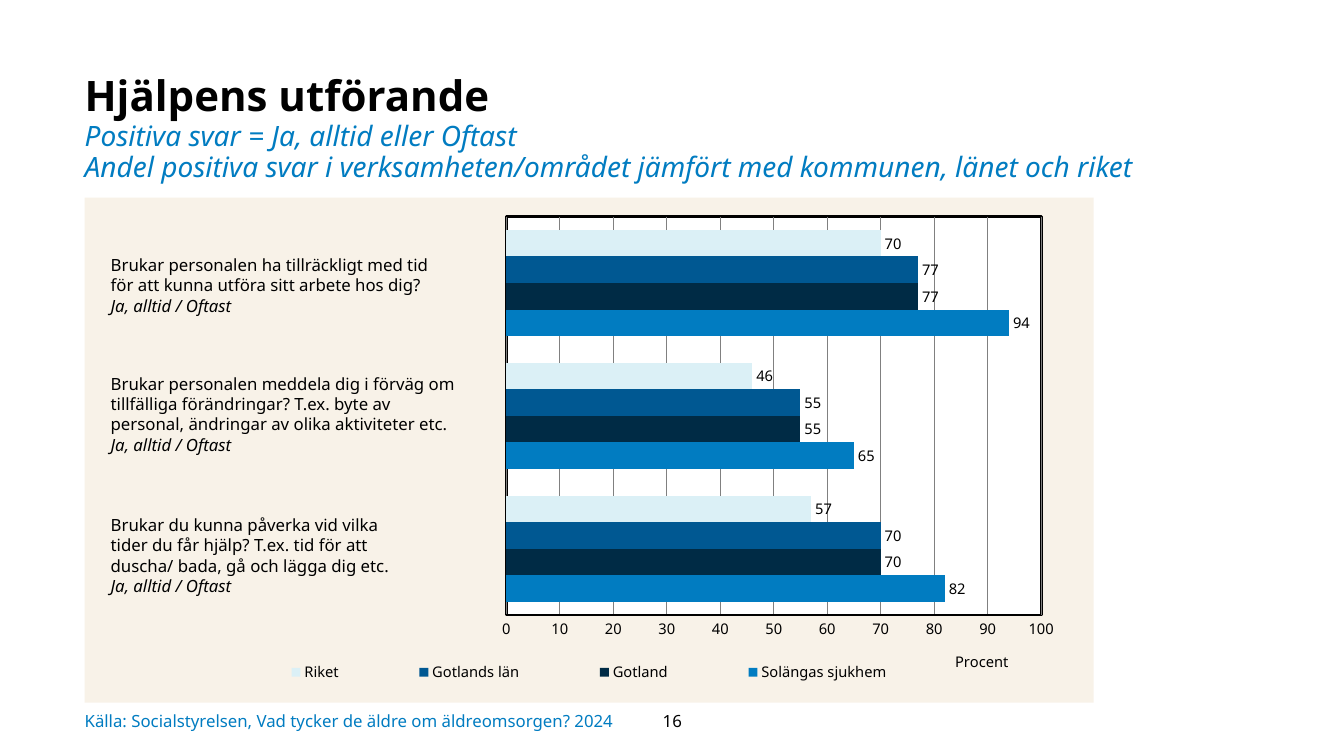
from dataclasses import dataclass

from lxml import etree
from pptx import Presentation
from pptx import util as u
from pptx.chart.data import CategoryChartData
from pptx.dml.color import RGBColor
from pptx.enum import chart as ec
from pptx.enum import text as et
from pptx.oxml import parse_xml
from pptx.oxml.ns import nsdecls, qn

FONT = "Noto Sans"
BLACK = RGBColor(0x00, 0x00, 0x00)
BLUE = RGBColor(0x01, 0x7C, 0xC1)
NAVY = RGBColor(0x00, 0x2B, 0x45)
MID = RGBColor(0x00, 0x58, 0x92)
PALE = RGBColor(0xDB, 0xF0, 0xF6)
SAND = RGBColor(0xF8, 0xF2, 0xE8)
WHITE = RGBColor(0xFF, 0xFF, 0xFF)
GREY = RGBColor(0x80, 0x80, 0x80)

# The slide is a grid of 160 columns by 90 rows.
WIDTH, HEIGHT = u.Inches(13.33), u.Inches(7.5)
COLS, ROWS = 160, 90
LEFT = 10.08
LABEL = 12


@dataclass(frozen=True)
class Box:
    col: float
    row: float
    wide: float
    high: float

    def place(self) -> tuple[int, int, int, int]:
        dx, dy = WIDTH / COLS, HEIGHT / ROWS
        return (int(self.col * dx), int(self.row * dy),
                int(self.wide * dx), int(self.high * dy))


@dataclass(frozen=True)
class Query:
    box: Box
    lines: tuple[str, ...]


@dataclass(frozen=True)
class Series:
    name: str
    values: tuple[int, ...]
    color: RGBColor


ANSWER = "Ja, alltid / Oftast"
QUERIES = (
    Query(Box(12, 29.76, 56.64, 10.56),
          ("Brukar personalen ha tillräckligt med tid",
           "för att kunna utföra sitt arbete hos dig?")),
    Query(Box(12, 43.92, 44.64, 10.92),
          ("Brukar personalen meddela dig i förväg om tillfälliga förändringar? "
           "T.ex. byte av personal, ändringar av olika aktiviteter etc.",)),
    Query(Box(12, 60.72, 35.64, 10.92),
          ("Brukar du kunna påverka vid vilka tider du får hjälp? "
           "T.ex. tid för att duscha/ bada, gå och lägga dig etc.",)),
)
SERIES = (
    Series("Solängas sjukhem", (82, 65, 94), BLUE),
    Series("Gotland", (70, 55, 77), NAVY),
    Series("Gotlands län", (70, 55, 77), MID),
    Series("Riket", (57, 46, 70), PALE),
)


def style(font, size: float, color: RGBColor = BLACK,
          bold: bool = False, italic: bool = False) -> None:
    font.name, font.size, font.bold, font.italic = FONT, u.Pt(size), bold, italic
    font.color.rgb = color


def write(slide, box: Box, words: str, size: float = LABEL, color: RGBColor = BLACK):
    frame = slide.shapes.add_textbox(*box.place()).text_frame
    frame.word_wrap = True
    frame.text = words
    for para in frame.paragraphs:
        for run in para.runs:
            style(run.font, size, color)
    return frame


def title(slide) -> None:
    words = ("Hjälpens utförande\vPositiva svar = Ja, alltid eller Oftast\v"
             "Andel positiva svar i verksamheten/området jämfört med kommunen, länet och riket")
    frame = write(slide, Box(LEFT, 8.16, 130.32, 14.52), words)
    frame.margin_left = 0
    para = frame.paragraphs[0]
    para.line_spacing = 0.94
    head, *subs = para.runs
    style(head.font, 30, bold=True)
    for sub in subs:
        style(sub.font, 20, BLUE, italic=True)


def ask(slide, query: Query) -> None:
    frame = write(slide, query.box, "\n".join((*query.lines, ANSWER)))
    frame.paragraphs[-1].runs[0].font.italic = True


def foot(slide) -> None:
    num = write(slide, Box(73.92, 83.4, 12.24, 4.8), "16")
    num.paragraphs[0].alignment = et.PP_ALIGN.CENTER
    cite = write(slide, Box(LEFT, 83.4, 108.36, 4.8),
                 "Källa: Socialstyrelsen, Vad tycker de äldre om äldreomsorgen? 2024",
                 color=BLUE)
    cite.margin_left = cite.margin_right = cite.margin_top = cite.margin_bottom = 0
    for frame in (num, cite):
        frame.vertical_anchor = et.MSO_ANCHOR.MIDDLE


def layout(node, index: int, **shares: float) -> None:
    """Pin a chart part at shares of the chart's width and height."""
    for old in node.findall(qn("c:layout")):
        node.remove(old)
    lay = parse_xml(f"<c:layout {nsdecls('c')}><c:manualLayout/></c:layout>")
    if node.tag == qn("c:plotArea"):
        etree.SubElement(lay[0], qn("c:layoutTarget")).set("val", "inner")
    for key in "xy":
        etree.SubElement(lay[0], qn(f"c:{key}Mode")).set("val", "edge")
    for key, share in shares.items():
        etree.SubElement(lay[0], qn(f"c:{key}")).set("val", str(share))
    node.insert(index, lay)


def panel(fill: RGBColor, line: str):
    return parse_xml(
        f'<c:spPr {nsdecls("c", "a")}><a:solidFill><a:srgbClr val="{fill}"/>'
        f"</a:solidFill>{line}</c:spPr>")


def scale(axis) -> None:
    axis.minimum_scale, axis.maximum_scale, axis.major_unit = 0, 100, 10
    axis.major_tick_mark = axis.minor_tick_mark = ec.XL_TICK_MARK.NONE
    axis.format.line.color.rgb = BLACK
    axis.format.line.width = u.Pt(2)
    axis.has_major_gridlines = True
    axis.major_gridlines.format.line.color.rgb = GREY
    axis.major_gridlines.format.line.width = u.Pt(0.75)
    style(axis.tick_labels.font, 10.5)
    name = axis.axis_title
    name.text_frame.text = "Procent"
    style(name.text_frame.paragraphs[0].runs[0].font, 10.5)
    layout(name._element, 1, x=0.86, y=0.89)


def graph(slide) -> None:
    data = CategoryChartData()
    data.categories = ["1", "2", "3"]
    for item in SERIES:
        data.add_series(item.name, item.values)
    chart = slide.shapes.add_chart(
        ec.XL_CHART_TYPE.BAR_CLUSTERED, *Box(LEFT, 23.52, 120.12, 60.12).place(), data).chart
    chart.has_title = False
    style(chart.font, 10.5)
    plot = chart.plots[0]
    plot.gap_width, plot.overlap, plot.vary_by_categories = 100, 0, False
    for bars, item in zip(plot.series, SERIES):
        bars.format.fill.solid()
        bars.format.fill.fore_color.rgb = item.color
        marks = bars.data_labels
        marks.show_value = True
        marks.position = ec.XL_LABEL_POSITION.OUTSIDE_END
        style(marks.font, 10.5)
    chart.category_axis.visible = False
    scale(chart.value_axis)
    chart.has_legend = True
    key = chart.legend
    key.position = ec.XL_LEGEND_POSITION.BOTTOM
    key.include_in_layout = False
    style(key.font, 10.5)
    layout(key._element, 1, x=0.13, y=0.91, w=0.74, h=0.06)
    root = chart._chartSpace
    area = root.chart.plotArea
    layout(area, 0, x=0.418, y=0.038, w=0.53, h=0.789)
    edge = f'<a:ln w="25400"><a:solidFill><a:srgbClr val="{BLACK}"/></a:solidFill></a:ln>'
    area.append(panel(WHITE, edge))
    root.chart.addnext(panel(SAND, "<a:ln><a:noFill/></a:ln>"))


def main() -> None:
    deck = Presentation()
    deck.slide_width, deck.slide_height = WIDTH, HEIGHT
    slide = deck.slides.add_slide(deck.slide_layouts[6])
    title(slide)
    graph(slide)
    for query in QUERIES:
        ask(slide, query)
    foot(slide)
    deck.save("out.pptx")


if __name__ == "__main__":
    main()
